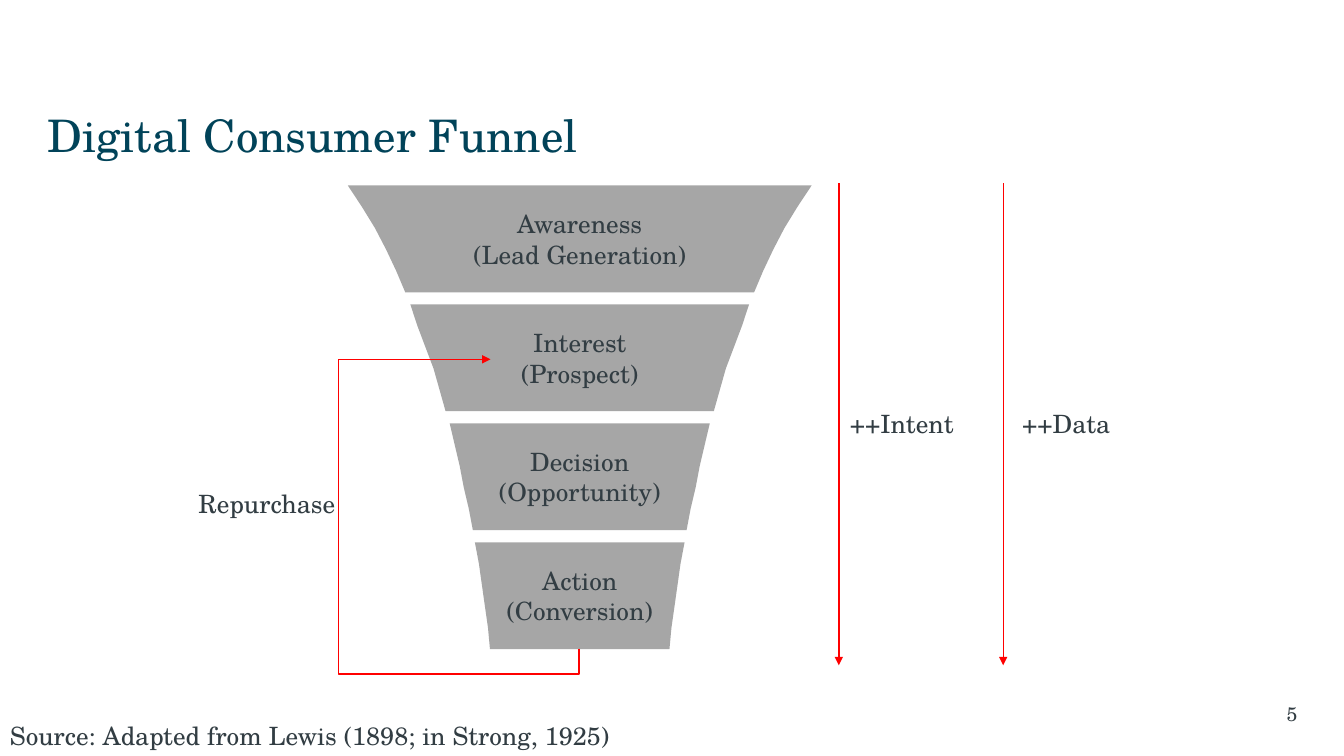
"""Build the digital consumer funnel slide."""
from dataclasses import dataclass

from lxml import etree
from pptx import Presentation
from pptx import util as u
from pptx.dml.color import RGBColor
from pptx.enum import shapes, text
from pptx.oxml.ns import qn

FONT = "TeX Gyre Schola"
COLORS = {"title": "014359", "text": "323D43", "stage": "A6A6A6", "arrow": "FF0000"}
CENTER_X = 5.75
STAGE_TOP = 1.84
STAGE_PITCH = 1.18
STAGE_HEIGHT = 1.06


@dataclass
class Stage:
    text: str
    half_widths: tuple[float, ...]


@dataclass
class Label:
    text: str
    left: float
    top: float
    width: float = 2.2
    height: float = 0.4
    size: int = 18
    color: str = "text"
    align: text.PP_ALIGN = text.PP_ALIGN.LEFT
    inset_left: float = 0.1
    inset_right: float = 0.1


STAGES = [
    Stage("Awareness\n(Lead Generation)", (2.3, 2.16, 2.03, 1.92, 1.82, 1.73)),
    Stage("Interest\n(Prospect)", (1.68, 1.61, 1.53, 1.45, 1.39, 1.33)),
    Stage("Decision\n(Opportunity)", (1.29, 1.24, 1.19, 1.15, 1.1, 1.06)),
    Stage("Action\n(Conversion)", (1.04, 1.0, 0.97, 0.94, 0.91, 0.89)),
]
LABELS = [
    Label("Digital Consumer Funnel", 0.47, 0.98, 12.39, 0.71, 32, "title", inset_left=0),
    Label("5", 10.31, 6.91, 2.56, 0.34, 14, align=text.PP_ALIGN.RIGHT, inset_right=0),
    Label("Repurchase", 1.87, 4.79),
    Label("++Intent", 8.33, 4),
    Label("++Data", 10.04, 4),
    Label("Source: Adapted from Lewis (1898; in Strong, 1925)", 0, 7.1, 6.46),
]
ARROW_XS = (8.32, 9.95)


def rgb(name: str) -> RGBColor:
    return RGBColor.from_string(COLORS[name])


def write(tf, content: str, size: int, color: str, align: text.PP_ALIGN) -> None:
    tf.text = content
    tf.word_wrap = True
    tf.vertical_anchor = text.MSO_ANCHOR.MIDDLE
    for p in tf.paragraphs:
        p.alignment = align
        for r in p.runs:
            r.font.name = FONT
            r.font.size = u.Pt(size)
            r.font.color.rgb = rgb(color)


def add_label(s, label: Label) -> None:
    sp = s.shapes.add_textbox(u.Inches(label.left), u.Inches(label.top),
                              u.Inches(label.width), u.Inches(label.height))
    tf = sp.text_frame
    write(tf, label.text, label.size, label.color, label.align)
    tf.margin_left = u.Inches(label.inset_left)
    tf.margin_right = u.Inches(label.inset_right)


def add_stage(s, stage: Stage, top: float) -> None:
    step = STAGE_HEIGHT / (len(stage.half_widths) - 1)
    edge = [(half, top + i * step) for i, half in enumerate(stage.half_widths)]
    outline = [(CENTER_X - half, y) for half, y in edge]
    outline += [(CENTER_X + half, y) for half, y in reversed(edge)]
    points = [(u.Inches(x), u.Inches(y)) for x, y in outline]
    builder = s.shapes.build_freeform(*points[0])
    builder.add_line_segments(points[1:], close=True)
    sp = builder.convert_to_shape()
    sp.shadow.inherit = False
    sp.fill.solid()
    sp.fill.fore_color.rgb = rgb("stage")
    sp.line.fill.background()
    tf = sp.text_frame
    write(tf, stage.text, 18, "text", text.PP_ALIGN.CENTER)
    tf.margin_left = tf.margin_right = tf.margin_top = tf.margin_bottom = 0


def add_arrow(s, kind: shapes.MSO_CONNECTOR, x1: float, y1: float, x2: float, y2: float):
    cx = s.shapes.add_connector(kind, u.Inches(x1), u.Inches(y1), u.Inches(x2), u.Inches(y2))
    cx.line.color.rgb = rgb("arrow")
    cx.line.width = u.Pt(1)
    sp_pr = cx._element.spPr
    etree.SubElement(sp_pr.find(qn("a:ln")), qn("a:tailEnd"), type="triangle")
    etree.SubElement(sp_pr, qn("a:effectLst"))
    return cx


def add_repurchase_loop(s) -> None:
    cx = add_arrow(s, shapes.MSO_CONNECTOR.ELBOW, 6.74, 4.56, 3.87, 5.44)
    sp_pr = cx._element.spPr
    sp_pr.find(qn("a:xfrm")).set("rot", "5400000")
    geom = sp_pr.find(qn("a:prstGeom"))
    geom.set("prst", "bentConnector4")
    guides = geom.find(qn("a:avLst"))
    for name, value in (("adj1", -8700), ("adj2", 271400)):
        etree.SubElement(guides, qn("a:gd"), name=name, fmla=f"val {value}")


def main() -> None:
    prs = Presentation()
    prs.slide_width, prs.slide_height = u.Inches(13.33), u.Inches(7.5)
    s = prs.slides.add_slide(prs.slide_layouts[6])
    for i, stage in enumerate(STAGES):
        add_stage(s, stage, STAGE_TOP + i * STAGE_PITCH)
    add_repurchase_loop(s)
    for x in ARROW_XS:
        add_arrow(s, shapes.MSO_CONNECTOR.STRAIGHT, x, 1.82, x, 6.6)
    for label in LABELS:
        add_label(s, label)
    prs.save("out.pptx")


if __name__ == "__main__":
    main()
